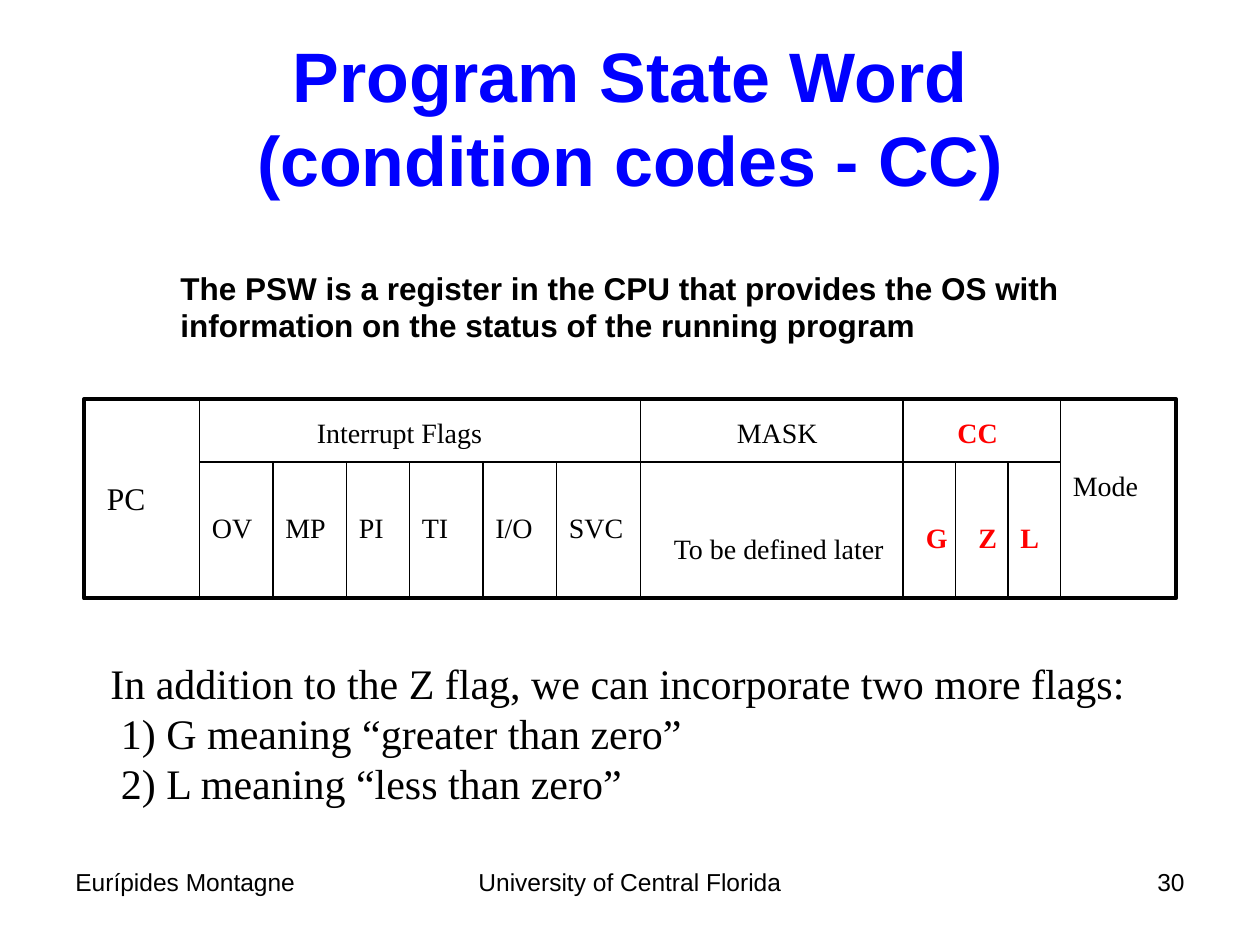
from pptx import Presentation
from pptx.dml.color import RGBColor
from pptx.enum.shapes import MSO_CONNECTOR, MSO_SHAPE
from pptx.enum.text import MSO_ANCHOR, MSO_AUTO_SIZE, PP_ALIGN
from pptx.util import Pt
from lxml import etree

LEFT, MID, RIGHT = PP_ALIGN.LEFT, PP_ALIGN.CENTER, PP_ALIGN.RIGHT
TOP, CENTER = MSO_ANCHOR.TOP, MSO_ANCHOR.MIDDLE
RECT, LINE = MSO_SHAPE.RECTANGLE, MSO_CONNECTOR.STRAIGHT
NO_FIT = MSO_AUTO_SIZE.NONE
DRAW_NS = "http://schemas.openxmlformats.org/drawingml/2006/main"

BLACK = RGBColor(0, 0, 0)
WHITE = RGBColor(255, 255, 255)
RED = RGBColor(255, 0, 0)
BLUE = RGBColor(0, 0, 255)

# style: font, size, bold, colour
THEME = {
    "title": ("Arial", 40, True, BLUE),
    "lead": ("Arial", 18, True, BLACK),
    "foot": ("Arial", 14, False, BLACK),
    "body": ("Times New Roman", 24, False, BLACK),
    "large": ("Times New Roman", 18, False, BLACK),
    "cell": ("Times New Roman", 16, False, BLACK),
    "code": ("Times New Roman", 16, True, RED),
}

TITLE = "Program State Word\v(condition codes - CC)"
LEAD = [
    "The PSW is a register in the CPU that provides the OS with",
    "information on the status of the running program",
]
INTRO = "In addition to the Z flag, we can incorporate two more flags:"
ITEMS = ["1) G meaning “greater than zero”", "2) L meaning “less than zero”"]
# text, left, width, alignment
FOOT = [
    ("Eurípides Montagne", 36, 168, LEFT),
    ("University of Central Florida", 246, 228, MID),
    ("30", 516, 168, RIGHT),
]

# register box and its rows
BOX_X, BOX_W = 48, 624
BOX_Y, ROW_Y, END_Y = 228, 264, 342
FIELDS = [114, 366, 516, 606]
FLAGS = [("OV", 114), ("MP", 156), ("PI", 198), ("TI", 234), ("I/O", 276), ("SVC", 318)]
CODES = [("G", 516), ("Z", 546), ("L", 576)]
# text, left, top, width, style
LABELS = [
    ("PC", 54, 270, 48, "large"),
    ("Interrupt Flags", 174, 234, 138, "cell"),
    ("MASK", 414, 234, 78, "cell"),
    ("CC", 540, 234, 48, "code"),
    ("Mode", 606, 264, 72, "cell"),
    ("To be defined later", 378, 300, 168, "cell"),
]
LABELS += [(text, x, 288, 54, "cell") for text, x in FLAGS]
# the L label starts on its rule, G and Z a little after theirs
LABELS += [(text, min(x + 6, 576), 294, 24, "code") for text, x in CODES]


def fill_text(frame, lines, style, align=LEFT, anchor=TOP):
    name, size, bold, color = THEME[style]
    frame.text = "\n".join(lines)
    frame.word_wrap = True
    frame.auto_size = NO_FIT
    frame.vertical_anchor = anchor
    for para in frame.paragraphs:
        para.alignment = align
        font = para.font
        font.name, font.size, font.bold = name, Pt(size), bold
        font.color.rgb = color
    return frame.paragraphs


def add_text(slide, lines, x, y, w, h, style, align=LEFT):
    box = slide.shapes.add_textbox(Pt(x), Pt(y), Pt(w), Pt(h))
    return fill_text(box.text_frame, lines, style, align)


def add_rule(slide, x1, y1, x2, y2):
    rule = slide.shapes.add_connector(LINE, Pt(x1), Pt(y1), Pt(x2), Pt(y2))
    rule.line.color.rgb = BLACK
    rule.line.width = Pt(0.75)
    etree.SubElement(rule._element.spPr, f"{{{DRAW_NS}}}effectLst")


def add_register(slide):
    box = slide.shapes.add_shape(RECT, Pt(BOX_X), Pt(BOX_Y), Pt(BOX_W), Pt(END_Y - BOX_Y))
    box.shadow.inherit = False
    box.fill.solid()
    box.fill.fore_color.rgb = WHITE
    box.line.color.rgb = BLACK
    box.line.width = Pt(2.25)

    for x in FIELDS:
        add_rule(slide, x, BOX_Y, x, END_Y)
    add_rule(slide, FIELDS[0], ROW_Y, FIELDS[-1], ROW_Y)
    for _, x in FLAGS[1:] + CODES[1:]:
        add_rule(slide, x, ROW_Y, x, END_Y)

    for text, x, y, w, style in LABELS:
        paras = add_text(slide, [text], x, y, w, 27, style)
        paras[0].space_before = Pt(10)


def main():
    deck = Presentation()
    deck.slide_width, deck.slide_height = Pt(720), Pt(540)
    slide = deck.slides.add_slide(deck.slide_layouts[5])

    title = slide.shapes.title
    title.left, title.top, title.width, title.height = Pt(36), Pt(15), Pt(648), Pt(103)
    fill_text(title.text_frame, [TITLE], "title", MID, CENTER)

    add_text(slide, LEAD, 96, 150, 527, 50, "lead")
    add_register(slide)
    paras = add_text(slide, [INTRO] + ITEMS, 56, 372, 595, 94, "body")
    for para in paras[1:]:
        para._p.get_or_add_pPr().set("marL", str(Pt(6)))
    for text, x, w, align in FOOT:
        add_text(slide, [text], x, 492, w, 37, "foot", align)

    deck.save("out.pptx")


if __name__ == "__main__":
    main()
